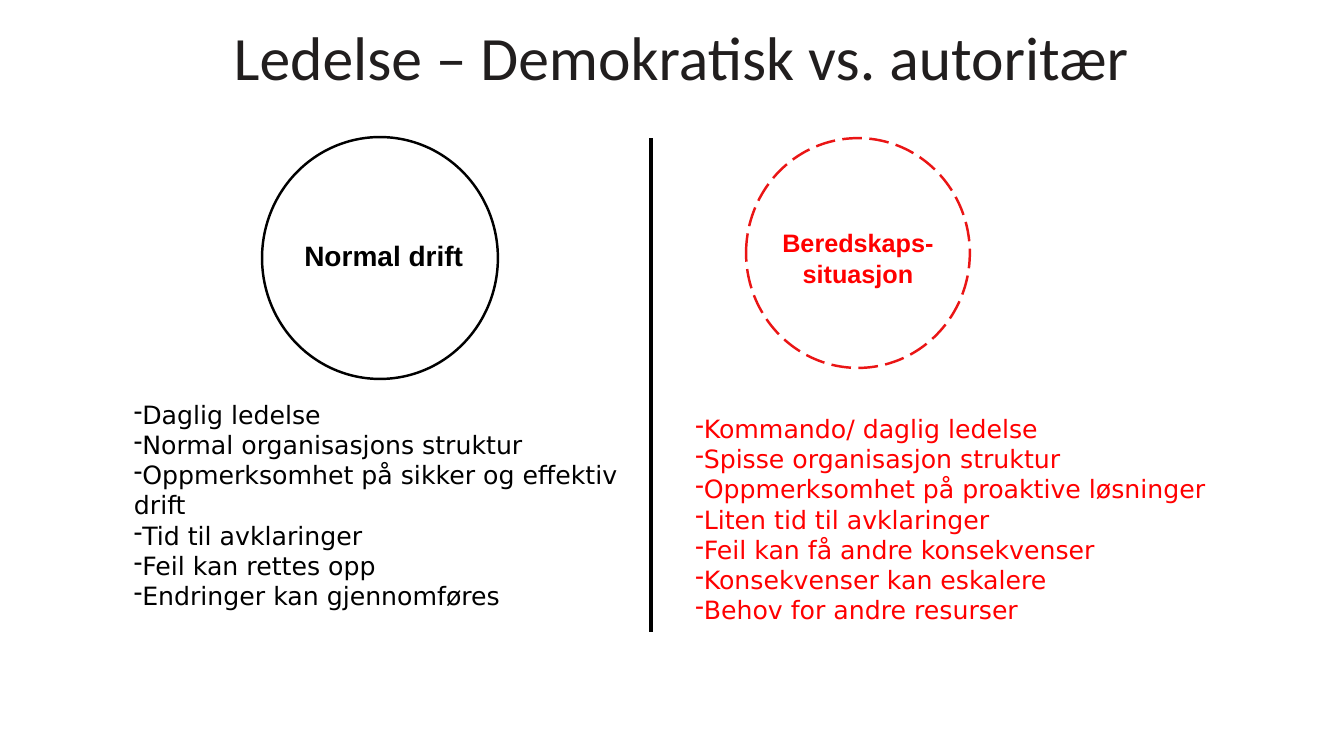
"""Build a slide that compares leadership in normal operation and in an emergency."""
from lxml import etree
from pptx import Presentation
from pptx.dml.color import RGBColor
from pptx.enum.dml import MSO_LINE
from pptx.enum.shapes import MSO_CONNECTOR, MSO_SHAPE
from pptx.enum.text import MSO_ANCHOR, PP_ALIGN
from pptx.oxml.ns import qn
from pptx.util import Inches, Pt

OVAL = MSO_SHAPE.OVAL
STRAIGHT = MSO_CONNECTOR.STRAIGHT
SOLID, LONG_DASH = MSO_LINE.SOLID, MSO_LINE.LONG_DASH
LEFT, CENTER = PP_ALIGN.LEFT, PP_ALIGN.CENTER
TOP, MIDDLE = MSO_ANCHOR.TOP, MSO_ANCHOR.MIDDLE
COLORS = {"title": "211E1E", "black": "000000", "red": "FF0000", "ring": "EA1515"}

presentation = Presentation()
presentation.slide_width, presentation.slide_height = Inches(13.33), Inches(7.5)
slide = presentation.slides.add_slide(presentation.slide_layouts[6])


def place(left, top, width, height):
    """Turn percentages of the slide's size into lengths."""
    across, down = presentation.slide_width / 100, presentation.slide_height / 100
    return int(left * across), int(top * down), int(width * across), int(height * down)


def add_text(area, lines, color, font, alignment=LEFT, anchor=TOP, wrap=True, spacing=1.0, bullet=None):
    """Add a text box with one paragraph per line."""
    frame = slide.shapes.add_textbox(*place(*area)).text_frame
    frame.word_wrap, frame.vertical_anchor = wrap, anchor
    for index, line in enumerate(lines):
        paragraph = frame.add_paragraph() if index else frame.paragraphs[0]
        paragraph.alignment, paragraph.line_spacing = alignment, spacing
        run = paragraph.add_run()
        run.text = line
        for name, value in font.items():
            setattr(run.font, name, value)
        run.font.color.rgb = RGBColor.from_string(COLORS[color])
        if bullet:
            properties = paragraph._p.get_or_add_pPr()
            properties.set("marL", "0")
            properties.set("indent", "0")
            etree.SubElement(properties, qn("a:buChar")).set("char", bullet)


add_text((16.65, 4.4, 70.9, 7.33), ["Ledelse – Demokratisk vs. autoritær"], "title",
         {"name": "Calibri", "size": Pt(44)}, anchor=MIDDLE, spacing=0.9)

situations = [
    {
        "circle": (19.5, 18.13, 17.55, 32), "ring": "black", "dash": SOLID,
        "label_area": (21.9, 30.93, 13.43, 5.87), "label": ["Normal drift"],
        "label_size": 20, "alignment": LEFT, "color": "black",
        "list_area": (9.23, 52.13, 39.31, 29.6),
        "points": [
            "Daglig ledelse",
            "Normal organisasjons struktur",
            "Oppmerksomhet på sikker og effektiv drift",
            "Tid til avklaringer",
            "Feil kan rettes opp",
            "Endringer kan gjennomføres",
        ],
    },
    {
        "circle": (55.51, 18.27, 16.65, 30.4), "ring": "ring", "dash": LONG_DASH,
        "label_area": (57.39, 29.47, 12.9, 9.47), "label": ["Beredskaps-", "situasjon"],
        "label_size": 18, "alignment": CENTER, "color": "red",
        "list_area": (51.01, 54, 42.24, 29.6),
        "points": [
            "Kommando/ daglig ledelse",
            "Spisse organisasjon struktur",
            "Oppmerksomhet på proaktive løsninger",
            "Liten tid til avklaringer",
            "Feil kan få andre konsekvenser",
            "Konsekvenser kan eskalere",
            "Behov for andre resurser",
        ],
    },
]

for situation in situations:
    circle = slide.shapes.add_shape(OVAL, *place(*situation["circle"]))
    circle.shadow.inherit = False
    circle.fill.background()
    circle.line.color.rgb = RGBColor.from_string(COLORS[situation["ring"]])
    circle.line.width, circle.line.dash_style = Pt(1.75), situation["dash"]
    add_text(situation["label_area"], situation["label"], situation["color"],
             {"name": "Arial", "size": Pt(situation["label_size"]), "bold": True},
             alignment=situation["alignment"], wrap=False)
    add_text(situation["list_area"], situation["points"], situation["color"],
             {"name": "DejaVu Sans", "size": Pt(18)}, bullet="-")

divider_x, divider_top, _, divider_height = place(48.46, 18.27, 0, 65.33)
divider = slide.shapes.add_connector(
    STRAIGHT, divider_x, divider_top, divider_x, divider_top + divider_height)
divider.line.color.rgb = RGBColor.from_string(COLORS["black"])
divider.line.width = Pt(3)
etree.SubElement(divider._element.spPr, qn("a:effectLst"))

presentation.save("out.pptx")
